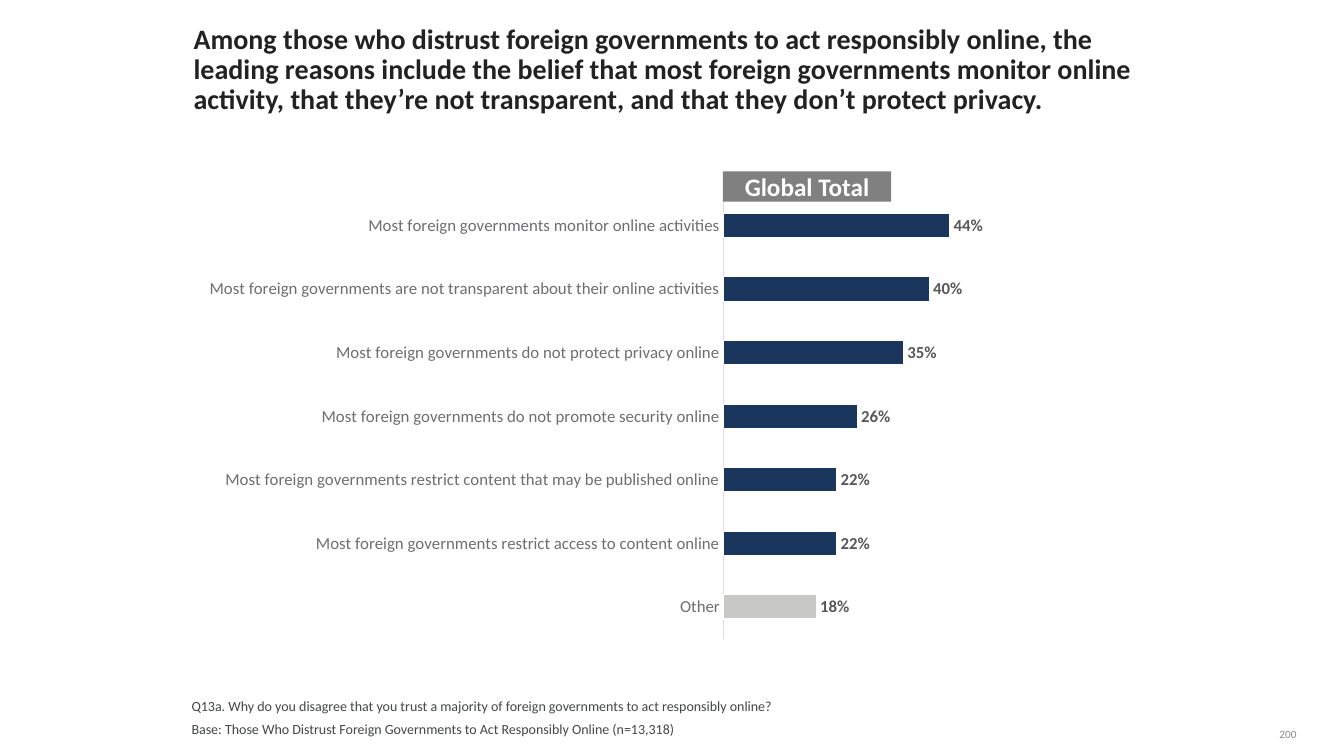
from pptx import Presentation
from pptx import util as u
from pptx.chart.data import CategoryChartData
from pptx.dml.color import RGBColor
from pptx.enum import chart as ch, shapes, text
from pptx.oxml import parse_xml
from pptx.oxml.ns import nsdecls, qn

COLORS = {
    "title": "222223", "note": "444647", "page": "888B8D", "category": "6E6E71",
    "value": "58585B", "axis": "DDDDDE", "reason": "1B365D", "other": "C8C9C7",
    "badge": "808080", "white": "FFFFFF",
}
REASONS = {
    "Most foreign governments monitor online activities": 0.44,
    "Most foreign governments are not transparent about their online activities": 0.40,
    "Most foreign governments do not protect privacy online": 0.35,
    "Most foreign governments do not promote security online": 0.26,
    "Most foreign governments restrict content that may be published online": 0.22,
    "Most foreign governments restrict access to content online": 0.22,
    "Other": 0.18,
}
PLOT_LAYOUT = {"x": 0.5, "y": 0.02, "w": 0.48, "h": 0.96}


class SurveySlide:
    font_name = "Calibri"

    def __init__(self, deck):
        self.slide = deck.slides.add_slide(deck.slide_layouts[6])

    def color(self, name):
        return RGBColor.from_string(COLORS[name])

    def style(self, font, size, color, bold=False):
        font.name = self.font_name
        font.size = u.Pt(size)
        font.bold = bold
        font.color.rgb = self.color(color)

    def add_lines(self, frame, lines, size, color, bold=False, spacing=1.0,
                  anchor=text.MSO_ANCHOR.TOP, align=text.PP_ALIGN.LEFT, gap=0):
        frame.margin_left = frame.margin_right = u.Inches(0)
        frame.margin_top = frame.margin_bottom = u.Inches(0)
        frame.vertical_anchor = anchor
        for index, line in enumerate(lines):
            paragraph = frame.add_paragraph() if index else frame.paragraphs[0]
            paragraph.alignment = align
            paragraph.line_spacing = spacing
            paragraph.space_after = u.Pt(gap)
            if index:
                paragraph.space_before = u.Pt(2)
            run = paragraph.add_run()
            run.text = line
            self.style(run.font, size, color, bold)

    def label(self, box, lines, size, color, wrap=True, **options):
        frame = self.slide.shapes.add_textbox(*map(u.Inches, box)).text_frame
        frame.word_wrap = wrap
        self.add_lines(frame, lines, size, color, **options)

    def badge(self, box, caption):
        banner = self.slide.shapes.add_shape(
            shapes.MSO_SHAPE.RECTANGLE, *map(u.Inches, box))
        banner.shadow.inherit = False
        banner.fill.solid()
        banner.fill.fore_color.rgb = self.color("badge")
        banner.line.fill.background()
        self.add_lines(banner.text_frame, [caption], 18, "white", bold=True,
                       anchor=text.MSO_ANCHOR.MIDDLE, align=text.PP_ALIGN.CENTER)

    def bars(self, box, values):
        data = CategoryChartData(number_format="0%")
        data.categories = list(values)
        data.add_series("Series 1", list(values.values()))
        chart = self.slide.shapes.add_chart(
            ch.XL_CHART_TYPE.BAR_CLUSTERED, *map(u.Inches, box), data).chart
        chart.has_legend = chart.has_title = False
        self.style(chart.font, 10, "title")

        reasons = chart.category_axis
        reasons.reverse_order = True
        reasons.has_major_gridlines = False
        reasons.major_tick_mark = ch.XL_TICK_MARK.NONE
        reasons.format.line.color.rgb = self.color("axis")
        reasons.format.line.width = u.Pt(0.75)
        self.style(reasons.tick_labels.font, 12, "category")

        shares = chart.value_axis
        shares.minimum_scale, shares.maximum_scale = 0, 1
        shares.has_major_gridlines = False
        shares.visible = False

        plot = chart.plots[0]
        plot.gap_width = 163
        plot.vary_by_categories = False
        series = plot.series[0]
        self.paint(series.format, "reason")
        self.paint(series.points[len(values) - 1].format, "other")
        labels = series.data_labels
        labels.show_value = True
        labels.number_format = "0%"
        labels.number_format_is_linked = False
        labels.position = ch.XL_LABEL_POSITION.OUTSIDE_END
        self.style(labels.font, 12, "value", bold=True)
        self.place_plot(chart)

    def paint(self, bar, color):
        bar.fill.solid()
        bar.fill.fore_color.rgb = self.color(color)
        bar.line.color.rgb = self.color("white")
        bar.line.width = u.Pt(0.75)

    def place_plot(self, chart):
        area = chart.element.find(".//" + qn("c:plotArea"))
        for automatic in area.findall(qn("c:layout")):
            area.remove(automatic)
        modes = "".join(f'<c:{side}Mode val="edge"/>' for side in "xy")
        sizes = "".join(f'<c:{side} val="{part}"/>' for side, part in PLOT_LAYOUT.items())
        area.insert(0, parse_xml(
            f'<c:layout {nsdecls("c")}><c:manualLayout><c:layoutTarget val="inner"/>'
            f'{modes}{sizes}</c:manualLayout></c:layout>'))


def main():
    deck = Presentation()
    deck.slide_width, deck.slide_height = u.Inches(13.33), u.Inches(7.5)
    survey = SurveySlide(deck)
    survey.label((12.69, 7, 0.45, 0.35), ["200"], 8, "page", wrap=False,
                 spacing=0.85, anchor=text.MSO_ANCHOR.BOTTOM)
    survey.label((1.92, 0.25, 9.46, 0.91), [
        "Among those who distrust foreign governments to act responsibly online, "
        "the leading reasons include the belief that most foreign governments "
        "monitor online activity, that they’re not transparent, and that they "
        "don’t protect privacy."], 20, "title", bold=True, spacing=0.9)
    survey.label((1.9, 6.93, 7.94, 0.39), [
        "Q13a. Why do you disagree that you trust a majority of foreign "
        "governments to act responsibly online?",
        "Base: Those Who Distrust Foreign Governments to Act Responsibly Online "
        "(n=13,318)"], 10, "note", spacing=0.95, gap=3,
        anchor=text.MSO_ANCHOR.BOTTOM)
    survey.bars((1.88, 1.83, 10.6, 4.6), REASONS)
    survey.badge((7.17, 1.7, 1.67, 0.3), "Global Total")
    deck.save("out.pptx")


if __name__ == "__main__":
    main()
